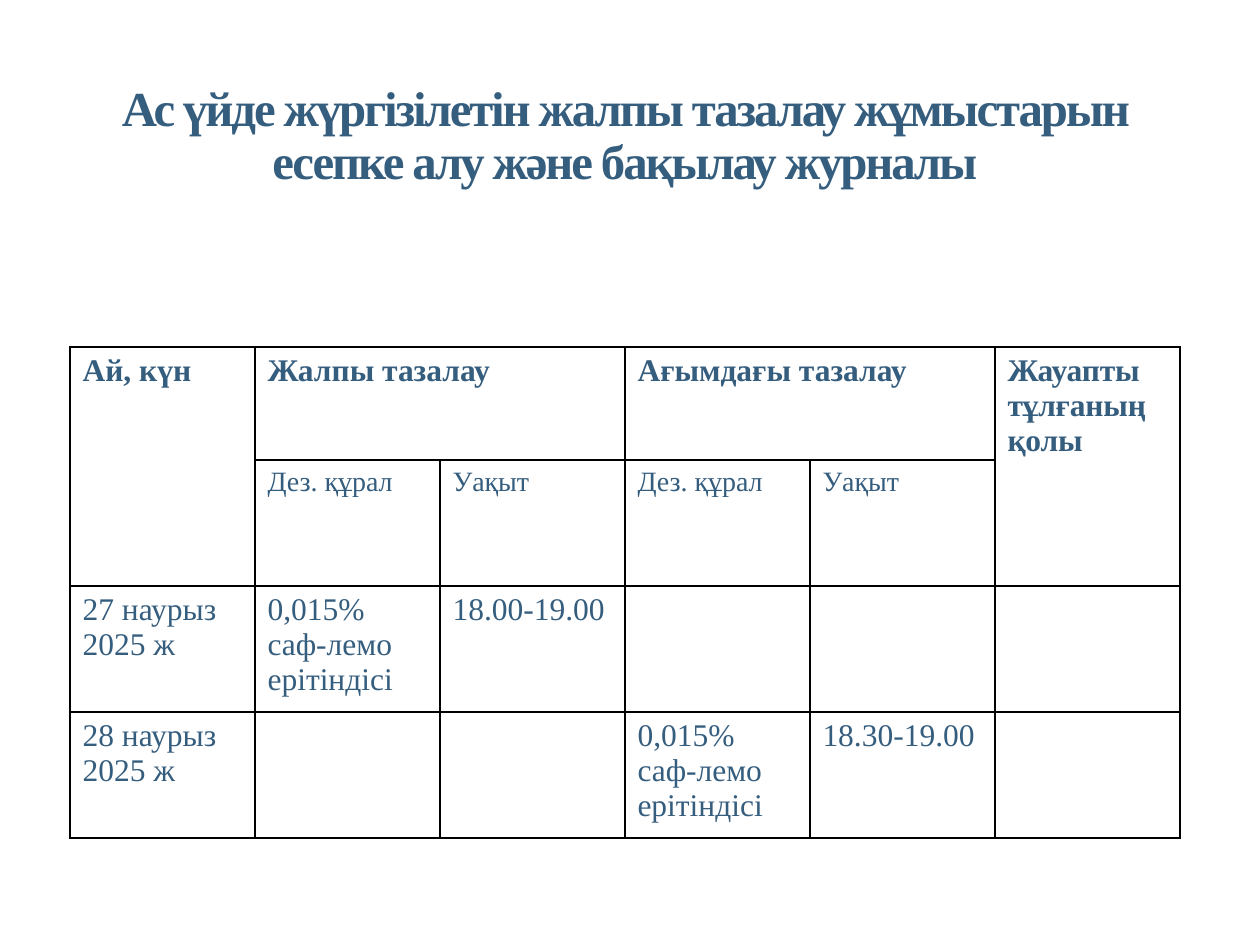
import pptx
import pptx.dml.color
import pptx.enum.text
import pptx.oxml
import pptx.oxml.ns
import pptx.util
from dataclasses import dataclass

PX = 914400 / 126  # EMU in one pixel


@dataclass(frozen=True)
class Theme:
    font: str = "Times New Roman"
    text: str = "355D7E"
    border: str = "000000"
    border_width: float = 1
    title_size: float = 27.9
    body_size: float = 18
    subheading_size: float = 16


THEME = Theme()
TITLE = "Ас үйде жүргізілетін жалпы тазалау жұмыстарын есепке алу және бақылау журналы"
SOLUTION = "0,015% саф-лемо ерітіндісі"
ROWS = [
    ["Ай, күн", "Жалпы тазалау", "", "Ағымдағы тазалау", "", "Жауапты тұлғаның қолы"],
    ["", "Дез. құрал", "Уақыт", "Дез. құрал", "Уақыт", ""],
    ["27 наурыз 2025 ж", SOLUTION, "18.00-19.00", "", "", ""],
    ["28 наурыз 2025 ж", "", "", SOLUTION, "18.30-19.00", ""],
]
MERGES = [((0, 0), (1, 0)), ((0, 1), (0, 2)), ((0, 3), (0, 4)), ((0, 5), (1, 5))]
COLUMN_WIDTH = 185
ROW_HEIGHTS = [113, 117, 117, 117]


def px(length):
    return pptx.util.Emu(round(length * PX))


def set_values(target, values):
    for name, value in values.items():
        setattr(target, name, value)


def write_text(frame, text, size, bold=False, tracking=0, **para_format):
    para = frame.paragraphs[0]
    set_values(para, para_format)
    span = para.add_run()
    span.text = text
    set_values(span.font, {"name": THEME.font, "size": pptx.util.Pt(size), "bold": bold})
    span.font.color.rgb = pptx.dml.color.RGBColor.from_string(THEME.text)
    if tracking:
        span._r.get_or_add_rPr().set("spc", str(round(tracking * 100)))


def add_title(page):
    box = page.shapes.add_textbox(px(68), px(69), px(1114), px(228))
    # The deep bottom margin lifts the title above the middle of its box
    set_values(box.text_frame, {
        "word_wrap": True,
        "vertical_anchor": pptx.enum.text.MSO_ANCHOR.MIDDLE,
        "margin_top": px(6),
        "margin_bottom": px(97),
    })
    write_text(box.text_frame, TITLE, THEME.title_size, bold=True, tracking=-1.2,
               alignment=pptx.enum.text.PP_ALIGN.CENTER, line_spacing=0.9)


def style_cell(cell):
    properties = cell._tc.get_or_add_tcPr()
    width = pptx.util.Pt(THEME.border_width)
    for side in ("lnL", "lnR", "lnT", "lnB"):
        properties.append(pptx.oxml.parse_xml(
            f'<a:{side} {pptx.oxml.ns.nsdecls("a")} w="{width}"><a:solidFill>'
            f'<a:srgbClr val="{THEME.border}"/></a:solidFill></a:{side}>'))
    cell.fill.background()


def add_journal(page):
    column_count = len(ROWS[0])
    frame = page.shapes.add_table(len(ROWS), column_count, px(70), px(347),
                                  px(COLUMN_WIDTH * column_count), px(sum(ROW_HEIGHTS)))
    table = frame.table
    set_values(table, {"first_row": False, "horz_banding": False})
    for column in table.columns:
        column.width = px(COLUMN_WIDTH)
    for row, height in zip(table.rows, ROW_HEIGHTS):
        row.height = px(height)

    # Headings span two rows or two columns
    for first, last in MERGES:
        table.cell(*first).merge(table.cell(*last))

    for row_index, texts in enumerate(ROWS):
        size = THEME.subheading_size if row_index == 1 else THEME.body_size
        for column_index, text in enumerate(texts):
            cell = table.cell(row_index, column_index)
            style_cell(cell)
            if text:
                tracking = -0.1 if (row_index, column_index) == (0, 5) else 0
                write_text(cell.text_frame, text, size, bold=row_index == 0,
                           tracking=tracking)


def main():
    deck = pptx.Presentation()
    set_values(deck, {"slide_width": px(1260), "slide_height": px(945)})
    page = deck.slides.add_slide(deck.slide_layouts[6])
    add_title(page)
    add_journal(page)
    deck.save("out.pptx")


if __name__ == "__main__":
    main()
